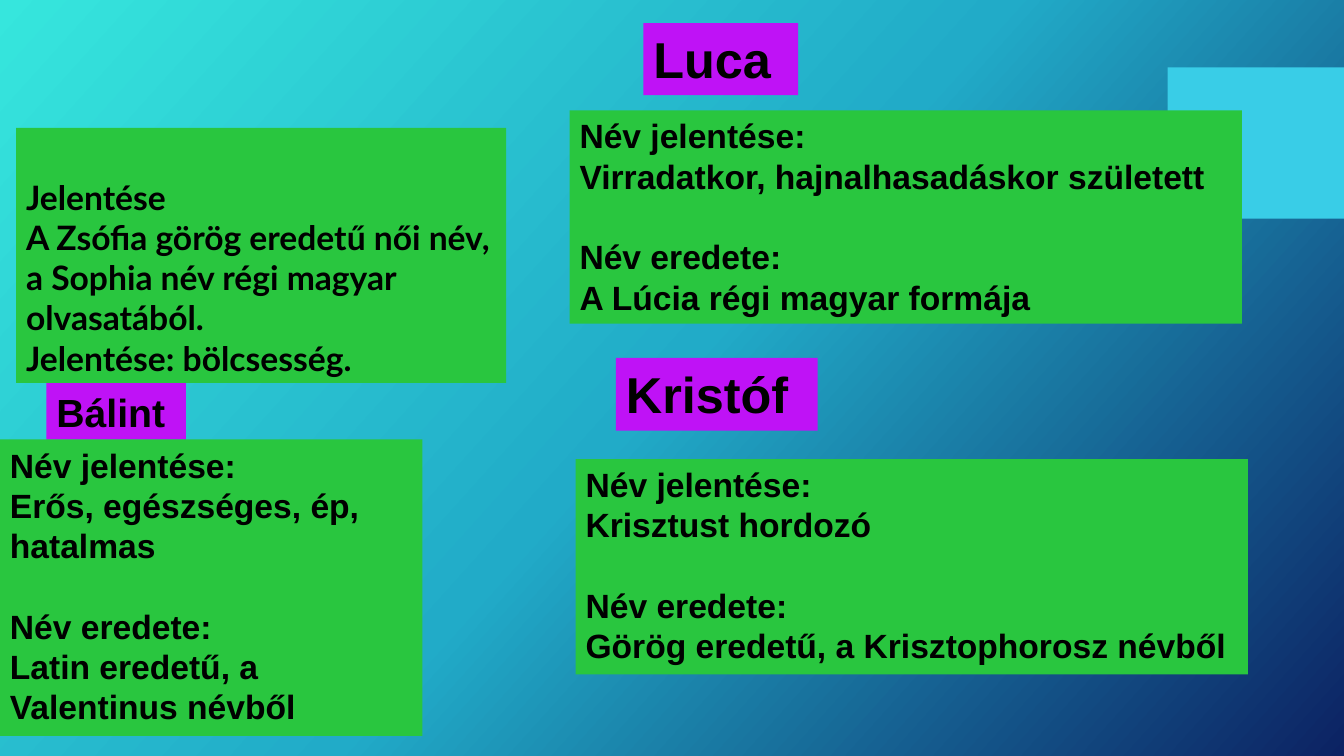
import copy

import pptx
import pptx.dml.color
import pptx.enum.shapes
import pptx.enum.text
import pptx.util

RGBColor = pptx.dml.color.RGBColor
Pt = pptx.util.Pt
Anchor = pptx.enum.text.MSO_ANCHOR

BLACK = RGBColor(0x00, 0x00, 0x00)
GREEN = RGBColor(0x29, 0xC6, 0x3F)
PURPLE = RGBColor(0xBF, 0x12, 0xF6)
SKY = RGBColor(0x39, 0xCD, 0xE7)
STOPS = [(0, RGBColor(0x36, 0xE6, 0xDD)),
         (0.5, RGBColor(0x21, 0xAB, 0xC8)),
         (1, RGBColor(0x0C, 0x22, 0x63))]

WIDE, HIGH = pptx.util.Inches(13.33), pptx.util.Inches(7.5)
LEAD = 1.2  # line height as a share of the text size

# Boxes are percentages of the slide: left, top, width, height.
# Tags are shares of their card: left, width, height; then the body's top.
CARDS = [
    ((0, 50.67, 31.43, 46.67), (0.11, 0.33, 0.16), 0.16, "Bálint", 28,
     "Erős, egészséges, ép, hatalmas", "Latin eredetű, a Valentinus névből"),
    ((42.38, 3.07, 50.03, 39.73), (0.11, 0.23, 0.24), 0.29, "Luca", 36,
     "Virradatkor, hajnalhasadáskor született", "A Lúcia régi magyar formája"),
    ((42.83, 47.33, 50.03, 41.87), (0.06, 0.3, 0.23), 0.32, "Kristóf", 36,
     "Krisztust hordozó", "Görög eredetű, a Krisztophorosz névből"),
]


def paint(slide):
    """Fill the background with the diagonal three-colour gradient."""
    fill = slide.background.fill
    fill.gradient()
    fill.gradient_angle = 318
    first = fill.gradient_stops[0]._gs
    first.addnext(copy.deepcopy(first))
    for stop, (place, color) in zip(fill.gradient_stops, STOPS):
        stop.position = place
        stop.color.rgb = color


def block(slide, box, color):
    left, top, width, height = box
    shape = slide.shapes.add_shape(
        pptx.enum.shapes.MSO_SHAPE.RECTANGLE,
        round(WIDE * left / 100), round(HIGH * top / 100),
        round(WIDE * width / 100), round(HIGH * height / 100))
    shape.shadow.inherit = False
    shape.fill.solid()
    shape.fill.fore_color.rgb = color
    shape.line.fill.background()
    return shape


def write(shape, lines, size=24, face="Arial", anchor=Anchor.TOP, gap=None):
    """Write one paragraph per line, with an empty line's space before line gap."""
    frame = shape.text_frame
    frame.word_wrap = True
    frame.vertical_anchor = anchor
    frame.text = "\n".join(lines)
    style = {"name": face, "size": Pt(size), "bold": True}
    for row, para in enumerate(frame.paragraphs):
        para.alignment = pptx.enum.text.PP_ALIGN.LEFT
        para.line_spacing = Pt(size * LEAD)
        if row == gap:
            para.space_before = Pt(size * LEAD)
        for key, value in style.items():
            setattr(para.font, key, value)
        para.font.color.rgb = BLACK


def card(slide, box, tag, start, name, size, sense, root):
    """Place a name tag and the facts below it inside the box."""
    left, top, width, height = box
    shift, span, depth = tag
    label = block(slide, (left + shift * width, top,
                          span * width, depth * height), PURPLE)
    write(label, [name], size)
    body = block(slide, (left, top + start * height,
                         width, (1 - start) * height), GREEN)
    write(body, ["Név jelentése:", sense, "Név eredete:", root], gap=2)


def note(slide, box):
    write(block(slide, box, GREEN), [
        "Jelentése",
        "A Zsófia görög eredetű női név, a Sophia név régi magyar olvasatából.",
        "Jelentése: bölcsesség.",
    ], face="Lato", anchor=Anchor.BOTTOM)


def main():
    deck = pptx.Presentation()
    deck.slide_width, deck.slide_height = WIDE, HIGH
    slide = deck.slides.add_slide(deck.slide_layouts[6])
    paint(slide)
    block(slide, (86.87, 8.93, 13.13, 20), SKY)
    note(slide, (1.2, 16.93, 36.46, 33.73))
    for item in CARDS:
        card(slide, *item)
    deck.save("out.pptx")


if __name__ == "__main__":
    main()
